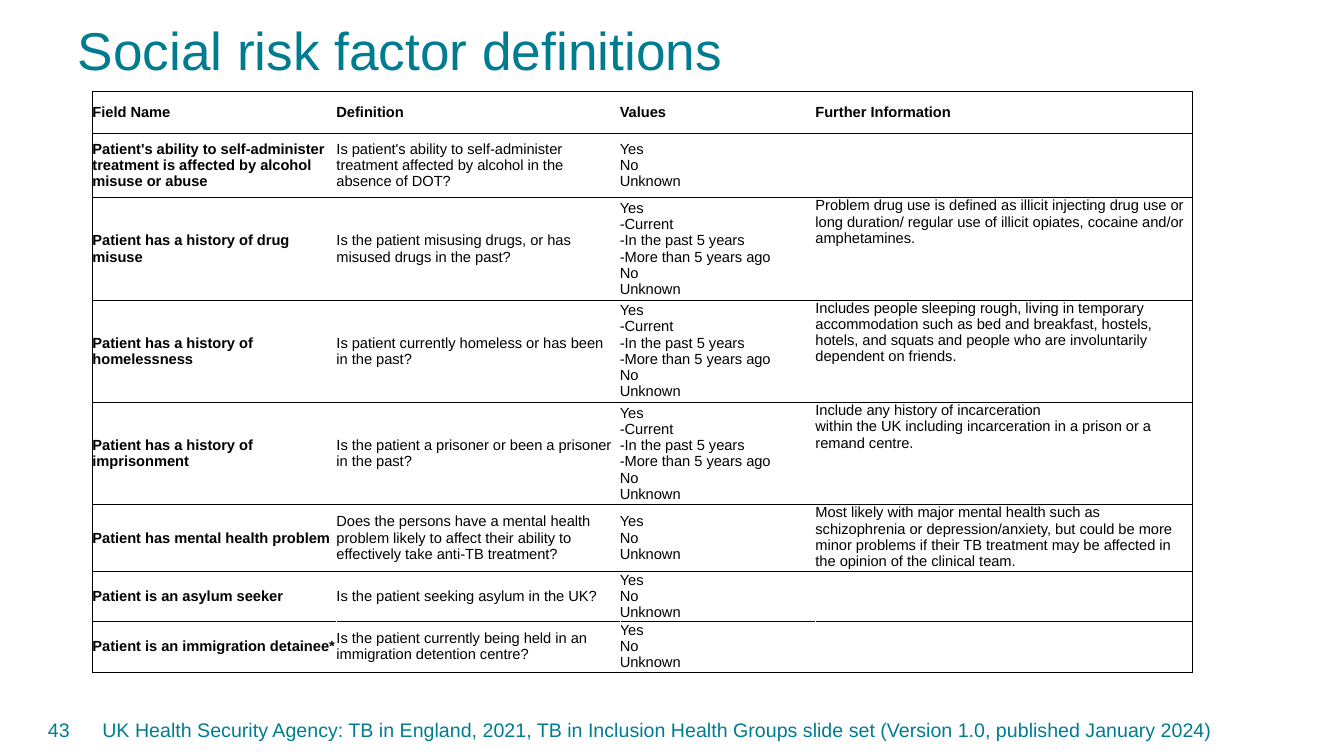
from dataclasses import dataclass

from lxml import etree
from pptx import Presentation
from pptx.dml.color import RGBColor
from pptx.enum.text import MSO_ANCHOR, MSO_AUTO_SIZE, PP_ALIGN
from pptx.oxml.ns import qn
from pptx.util import Cm, Pt

TOP, MIDDLE = MSO_ANCHOR.TOP, MSO_ANCHOR.MIDDLE
LEFT, RIGHT = PP_ALIGN.LEFT, PP_ALIGN.RIGHT
FIXED = MSO_AUTO_SIZE.NONE


@dataclass(frozen=True)
class Theme:
    face: str = "Arial"
    teal: str = "007C91"
    black: str = "000000"
    white: str = "FFFFFF"
    title: float = 38
    foot: float = 14
    cell: float = 10.5
    pitch: float = 11.6
    rule: float = 0.5


HEADS = ("Field Name", "Definition", "Values", "Further Information")
BASIC = "Yes\vNo\vUnknown"
TIMED = "Yes\v-Current\v-In the past 5 years\v-More than 5 years ago\vNo\vUnknown"
RISKS = [
    ("Patient's ability to self-administer treatment is affected by alcohol misuse or abuse",
     "Is patient's ability to self-administer treatment affected by alcohol in the absence of DOT?",
     BASIC, ""),
    ("Patient has a history of drug misuse",
     "Is the patient misusing drugs, or has misused drugs in the past?",
     TIMED,
     "Problem drug use is defined as illicit injecting drug use or long duration/ regular use "
     "of illicit opiates, cocaine and/or amphetamines."),
    ("Patient has a history of homelessness",
     "Is patient currently homeless or has been in the past?",
     TIMED,
     "Includes people sleeping rough, living in temporary accommodation such as bed and "
     "breakfast, hostels, hotels, and squats and people who are involuntarily dependent on friends."),
    ("Patient has a history of imprisonment",
     "Is the patient a prisoner or been a prisoner in the past?",
     TIMED,
     "Include any history of incarceration\vwithin the UK including incarceration in a prison "
     "or a remand centre."),
    ("Patient has mental health problem",
     "Does the persons have a mental health problem likely to affect their ability to "
     "effectively take anti-TB treatment?",
     BASIC,
     "Most likely with major mental health such as schizophrenia or depression/anxiety, but "
     "could be more minor problems if their TB treatment may be affected in the opinion of "
     "the clinical team."),
    ("Patient is an asylum seeker", "Is the patient seeking asylum in the UK?", BASIC, ""),
    ("Patient is an immigration detainee*",
     "Is the patient currently being held in an immigration detention centre?",
     BASIC, ""),
]
WIDTHS = (6.15, 7.14, 4.93, 9.5)
GAPS = (0, 0.08, 0, 0)
HEIGHTS = (1.05, 1.62, 2.58, 2.58, 2.58, 1.67, 1.27, 1.27)
SOURCE = ("UK Health Security Agency: TB in England, 2021, TB in Inclusion Health Groups "
          "slide set (Version 1.0, published January 2024)")


class Page:
    def __init__(self, slide, theme):
        self.slide = slide
        self.theme = theme

    def style(self, para, size, color, bold=False, align=LEFT):
        para.alignment = align
        font = para.font
        font.name = self.theme.face
        font.size = Pt(size)
        font.bold = bold
        font.color.rgb = RGBColor.from_string(color)

    def title(self, text, left, top, width, height):
        box = self.slide.shapes.title
        box.left, box.top, box.width, box.height = map(Cm, (left, top, width, height))
        frame = box.text_frame
        frame.text = text
        frame.auto_size = FIXED
        frame.vertical_anchor = TOP
        para = frame.paragraphs[0]
        para.line_spacing = 0.9
        self.style(para, self.theme.title, self.theme.teal)

    def label(self, text, left, top, width, height, align=LEFT):
        box = self.slide.shapes.add_textbox(*map(Cm, (left, top, width, height)))
        frame = box.text_frame
        frame.word_wrap = True
        frame.vertical_anchor = MIDDLE
        frame.text = text
        self.style(frame.paragraphs[0], self.theme.foot, self.theme.teal, align=align)

    def border(self, cell, side, color):
        props = cell._tc.get_or_add_tcPr()
        line = etree.SubElement(props, qn(f"a:ln{side}"), w=str(Pt(self.theme.rule)))
        if color is None:
            etree.SubElement(line, qn("a:noFill"))
        else:
            fill = etree.SubElement(line, qn("a:solidFill"))
            etree.SubElement(fill, qn("a:srgbClr"), val=color)

    def cell(self, cell, text, bold, anchor, sides, gap):
        cell.margin_left = cell.margin_top = cell.margin_bottom = 0
        cell.margin_right = Cm(gap)
        cell.vertical_anchor = anchor
        for side, color in sides.items():
            self.border(cell, side, color)
        cell.fill.solid()
        cell.fill.fore_color.rgb = RGBColor.from_string(self.theme.white)
        cell.text_frame.text = text
        para = cell.text_frame.paragraphs[0]
        para.line_spacing = Pt(self.theme.pitch)
        self.style(para, self.theme.cell, self.theme.black, bold)

    def table(self, rows, left, top, widths, heights, gaps):
        frame = self.slide.shapes.add_table(
            len(rows), len(widths), *map(Cm, (left, top, sum(widths), sum(heights))))
        grid = frame.table
        grid.first_row = grid.horz_banding = False
        for col, width in zip(grid.columns, widths):
            col.width = Cm(width)
        for row, height in zip(grid.rows, heights):
            row.height = Cm(height)
        black = self.theme.black
        end, edge = len(rows) - 1, len(widths) - 1
        for r, texts in enumerate(rows):
            inner = self.theme.white if r == end else None
            for c, text in enumerate(texts):
                sides = {"L": black if c == 0 else inner,
                         "R": black if c == edge else inner,
                         "T": black, "B": black}
                anchor = TOP if r and c == edge else MIDDLE
                self.cell(grid.cell(r, c), text, r == 0 or c == 0, anchor, sides, gaps[c])


def main():
    deck = Presentation()
    deck.slide_width, deck.slide_height = Cm(33.87), Cm(19.05)
    page = Page(deck.slides.add_slide(deck.slide_layouts[5]), Theme())
    page.title("Social risk factor definitions", 1.7, 0.5, 30.91, 2.69)
    page.label("43", 0.36, 17.88, 1.65, 1.02, RIGHT)
    page.table([HEADS, *RISKS], 2.33, 2.31, WIDTHS, HEIGHTS, GAPS)
    page.label(SOURCE, 2.33, 17.88, 30.28, 1.02)
    deck.save("out.pptx")


if __name__ == "__main__":
    main()
